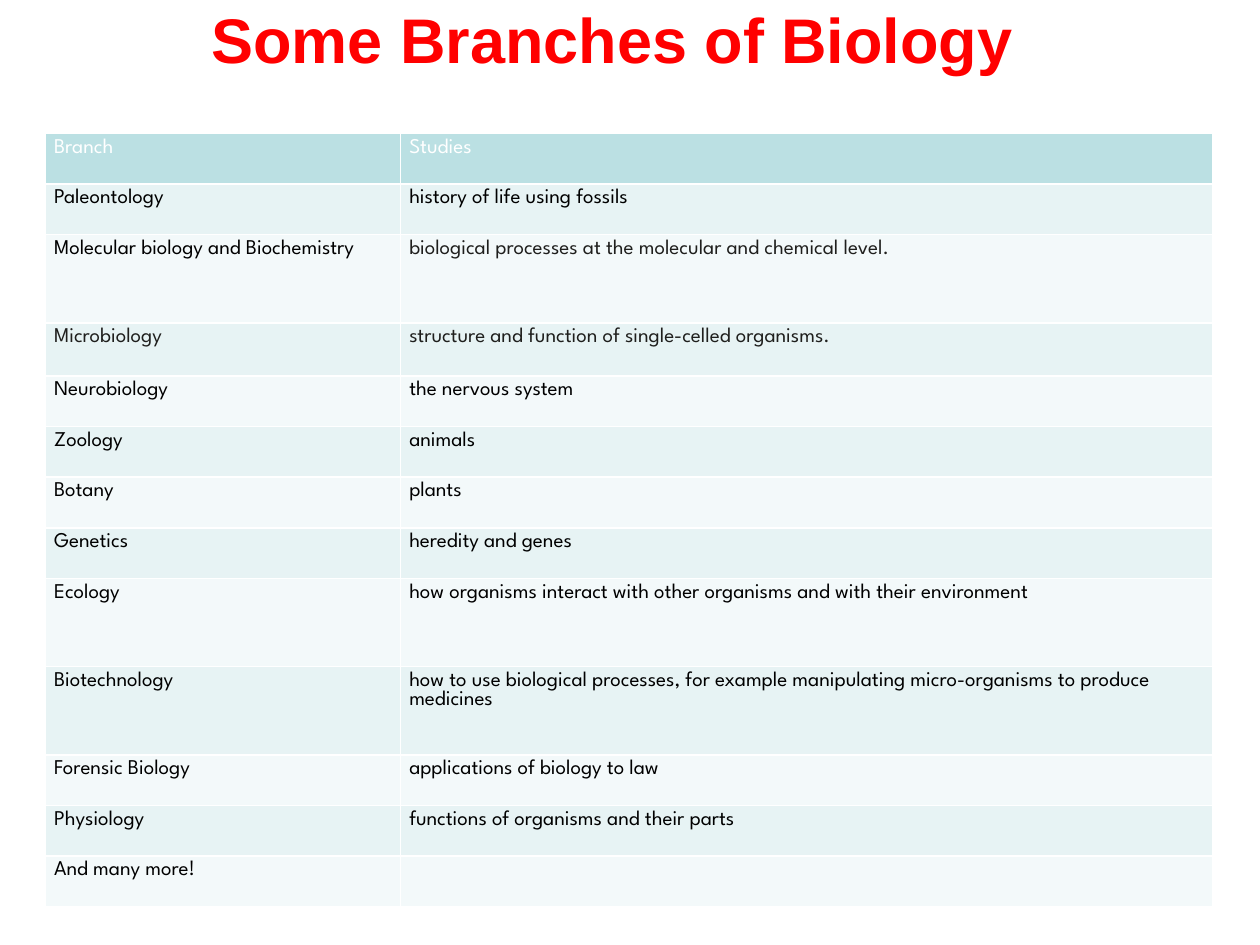
"""Build a slide with a table of the branches of biology."""
from pptx import Presentation
from pptx.dml.color import RGBColor as RGB
from pptx.enum.text import MSO_ANCHOR as Anchor, PP_ALIGN as Align
from pptx.util import Cm, Pt

RED = RGB(0xFF, 0x00, 0x00)
WHITE = RGB(0xFF, 0xFF, 0xFF)
BLACK = RGB(0x00, 0x00, 0x00)
SOFT = RGB(0x1F, 0x1F, 0x1D)
TEAL = RGB(0xBB, 0xE0, 0xE3)
BANDS = RGB(0xF3, 0xF9, 0xFA), RGB(0xE7, 0xF3, 0xF4)

HEAD = {"name": "Arial", "size": Pt(36), "bold": True}
BODY = {"name": "League Spartan", "size": Pt(12), "bold": False}
PADS = {
    "margin_left": Cm(0.18), "margin_right": Cm(0.18),
    "margin_top": Cm(0.1), "margin_bottom": Cm(0.1),
}
COLS = 7.16, 16.38
LOW, MID, TALL = 1.02, 1.07, 1.78
ROWS = [
    (LOW, "Branch", "Studies"),
    (LOW, "Paleontology", "history of life using fossils"),
    (TALL, "Molecular biology and Biochemistry",
     "biological processes at the molecular and chemical level."),
    (MID, "Microbiology",
     "structure and function of single-celled organisms."),
    (LOW, "Neurobiology", "the nervous system"),
    (LOW, "Zoology", "animals"),
    (LOW, "Botany", "plants"),
    (LOW, "Genetics", "heredity and genes"),
    (TALL, "Ecology",
     "how organisms interact with other organisms and with their environment"),
    (TALL, "Biotechnology",
     "how to use biological processes, for example manipulating "
     "micro-organisms to produce medicines"),
    (LOW, "Forensic Biology", "applications of biology to law"),
    (LOW, "Physiology", "functions of organisms and their parts"),
    (LOW, "And many more!", ""),
]
SOFT_CELLS = {(2, 1), (3, 0), (3, 1)}


def apply(item, form):
    """Set each format value on the item."""
    for key, value in form.items():
        setattr(item, key, value)


def style(para, form, color):
    """Format the font of a paragraph."""
    apply(para.font, form)
    para.font.color.rgb = color


def add_title(slide, text):
    """Place and format the title."""
    title = slide.shapes.title
    apply(title, {"left": Cm(0.91), "top": Cm(0.13),
                  "width": Cm(22.86), "height": Cm(1.27)})
    frame = title.text_frame
    frame.text = text
    frame.vertical_anchor = Anchor.MIDDLE
    para = frame.paragraphs[0]
    para.alignment = Align.CENTER
    style(para, HEAD, RED)


def fill_cell(cell, text, fill, color):
    """Write one cell and give it its colours."""
    cell.text = text
    apply(cell, PADS)
    cell.fill.solid()
    cell.fill.fore_color.rgb = fill
    style(cell.text_frame.paragraphs[0], BODY, color)


def add_grid(slide):
    """Add the table of branches."""
    high = sum(row[0] for row in ROWS)
    grid = slide.shapes.add_table(
        len(ROWS), len(COLS), Cm(0.91), Cm(2.69), Cm(sum(COLS)), Cm(high)
    ).table
    for col, width in zip(grid.columns, COLS):
        col.width = Cm(width)
    for i, (height, *texts) in enumerate(ROWS):
        grid.rows[i].height = Cm(height)
        fill = BANDS[i % 2] if i else TEAL
        for j, text in enumerate(texts):
            ink = SOFT if (i, j) in SOFT_CELLS else BLACK
            fill_cell(grid.cell(i, j), text, fill, ink if i else WHITE)


def main():
    """Build and save the slide."""
    deck = Presentation()
    apply(deck, {"slide_width": Cm(25.4), "slide_height": Cm(19.05)})
    slide = deck.slides.add_slide(deck.slide_layouts[5])
    add_title(slide, "Some Branches of Biology")
    add_grid(slide)
    deck.save("out.pptx")


if __name__ == "__main__":
    main()
